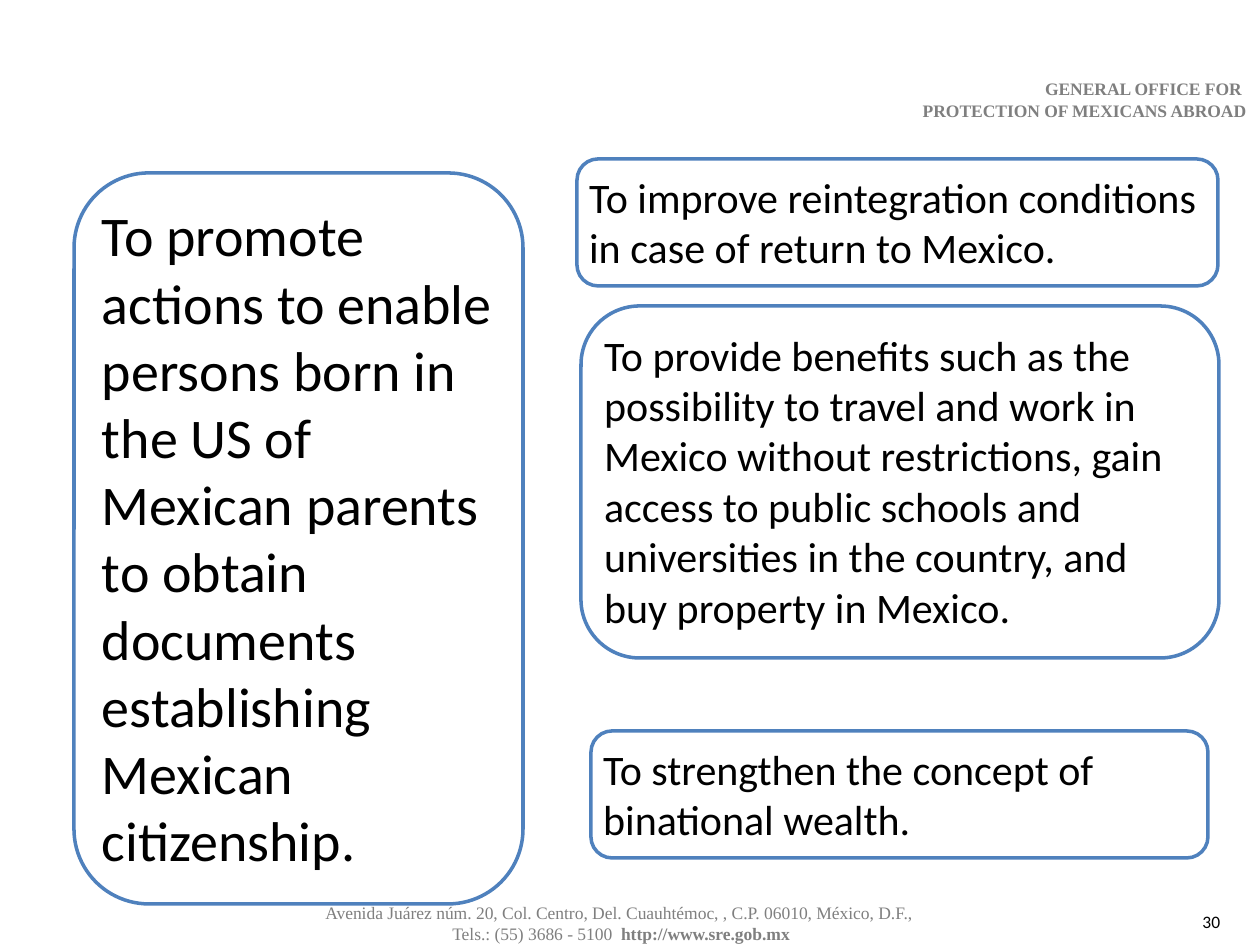
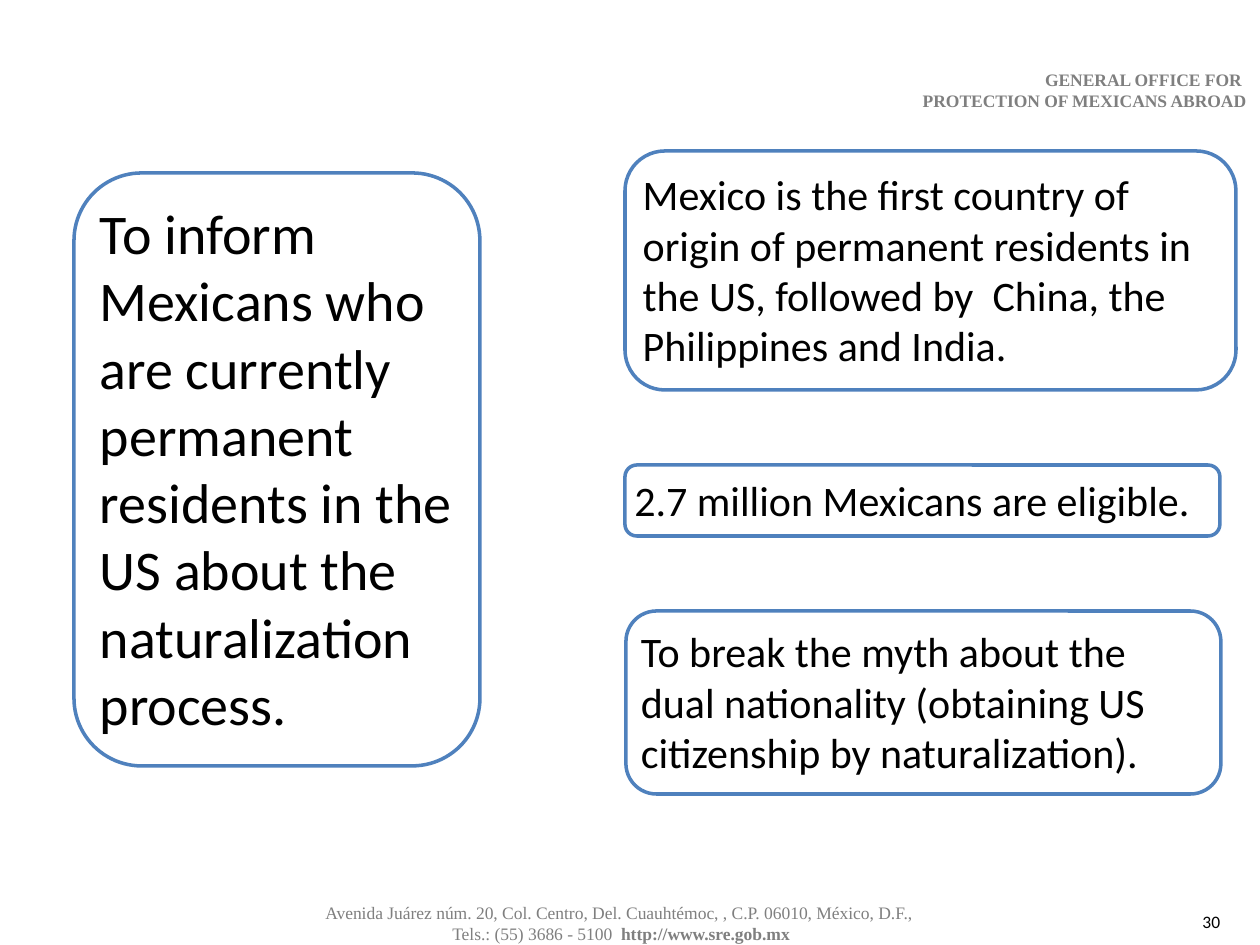
from pptx import Presentation
from pptx.dml.color import RGBColor
from pptx.enum.shapes import MSO_SHAPE
from pptx.enum.text import MSO_ANCHOR as ANCHOR, PP_ALIGN as ALIGN
from pptx.util import Pt

PX = 914400 / 126
GREY, BLUE, BLACK, WHITE = "7F7F7F", "4F81BD", "000000", "FFFFFF"
SERIF, SANS = "Times New Roman", "Calibri"

HEADER = [[("GENERAL OFFICE FOR ", True)],
          [("PROTECTION OF MEXICANS ABROAD", True)]]
FOOTER = [[("Avenida Juárez núm. 20, Col. Centro, Del. Cuauhtémoc, , C.P. 06010, México, D.F., ", False)],
          [("Tels.: (55) 3686 - 5100  ", False), ("http://www.sre.gob.mx", True)]]
PAGE = [[("30", False)]]

# Each slide: top of the header, then boxes as (left, top, width, height), size, text
SLIDES = [
    (78, [
        ((74, 173, 449, 731), 32, "To promote actions to enable persons born in the US of "
         "Mexican parents to obtain documents establishing Mexican citizenship."),
        ((577, 159, 641, 127), 24, "To improve reintegration conditions in case of return to Mexico."),
        ((581, 306, 638, 352), 24, "To provide benefits such as the possibility to travel and work "
         "in Mexico without restrictions, gain access to public schools and universities in the "
         "country, and buy property in Mexico."),
        ((591, 731, 617, 127), 24, "To strengthen the concept of binational wealth."),
    ]),
    (68, [
        ((74, 173, 406, 593), 32, "To inform Mexicans who are currently permanent residents in "
         "the US about the naturalization process."),
        ((625, 151, 611, 239), 24, "Mexico is the first country of origin of permanent residents "
         "in the US, followed by  China, the Philippines and India."),
        ((625, 465, 595, 71), 24, "2.7 million Mexicans are eligible."),
        ((626, 611, 595, 183), 24, "To break the myth about the dual nationality (obtaining US "
         "citizenship by naturalization)."),
    ]),
]


def rgb(color):
    return RGBColor.from_string(color)


def write(sp, paras, size, font, color, align, anchor, inset):
    """Fill a shape with paragraphs, each a list of (text, bold) runs."""
    tf = sp.text_frame
    tf.word_wrap = True
    tf.vertical_anchor = anchor
    tf.margin_left = tf.margin_top = tf.margin_right = tf.margin_bottom = round(inset * PX)
    for i, runs in enumerate(paras):
        p = tf.add_paragraph() if i else tf.paragraphs[0]
        p.alignment = align
        p.font.size, p.font.name = Pt(size), font
        p.font.color.rgb = rgb(color)
        for text, bold in runs:
            r = p.add_run()
            r.text = text
            r.font.size, r.font.name, r.font.bold = Pt(size), font, bold
            r.font.color.rgb = rgb(color)


prs = Presentation()
prs.slide_width, prs.slide_height = round(1260 * PX), round(945 * PX)

for header_top, boxes in SLIDES:
    s = prs.slides.add_slide(prs.slide_layouts[6])
    for frame, paras, font, color, align in [
        ((112, header_top, 1134, 43), HEADER, SERIF, GREY, ALIGN.RIGHT),
        ((224, 901, 794, 43), FOOTER, SERIF, GREY, ALIGN.CENTER),
        ((926, 911, 294, 21), PAGE, SANS, BLACK, ALIGN.RIGHT),
    ]:
        sp = s.shapes.add_textbox(*[round(v * PX) for v in frame])
        write(sp, paras, 10, font, color, align, ANCHOR.MIDDLE, 0)

    for frame, size, text in boxes:
        sp = s.shapes.add_shape(MSO_SHAPE.ROUNDED_RECTANGLE, *[round(v * PX) for v in frame])
        sp.shadow.inherit = False
        sp.fill.solid()
        sp.fill.fore_color.rgb = rgb(WHITE)
        sp.line.color.rgb = rgb(BLUE)
        sp.line.width = Pt(2)
        write(sp, [[(text, False)]], size, SANS, BLACK, ALIGN.LEFT, ANCHOR.TOP, 6)

prs.save("out.pptx")
